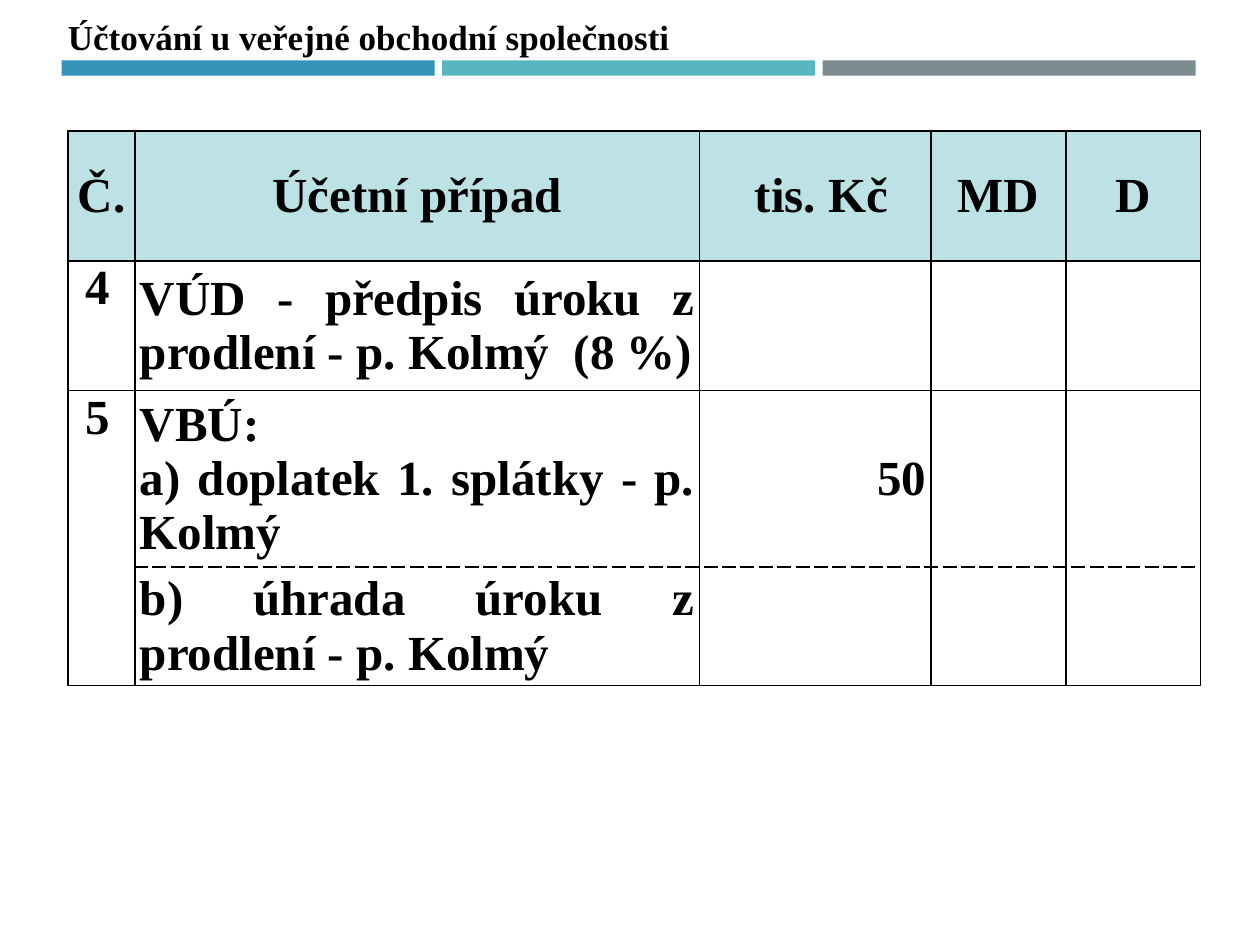
from lxml import etree
from pptx import Presentation
from pptx.dml.color import RGBColor
from pptx.enum.shapes import MSO_SHAPE as SHAPE
from pptx.enum.text import MSO_ANCHOR as ANCHOR, MSO_AUTO_SIZE as AUTO, PP_ALIGN as ALIGN
from pptx.oxml.ns import qn
from pptx.util import Inches, Pt


def color(value):
    return RGBColor.from_string(value)


def add_run(p, text, size):
    r = p.add_run()
    r.text = text
    r.font.name = "Times New Roman"
    r.font.size = Pt(size)
    r.font.bold = True
    r.font.color.rgb = color("000000")


prs = Presentation()
prs.slide_width, prs.slide_height = Inches(10), Inches(7.5)
s = prs.slides.add_slide(prs.slide_layouts[6])

# Three bars under the title
for i, fill in enumerate(["3494BA", "58B6C0", "7A8C8E"]):
    sp = s.shapes.add_shape(SHAPE.RECTANGLE, Inches(0.49 + i * 3.02), Inches(0.48),
                            Inches(2.96), Inches(0.12))
    sp.shadow.inherit = False
    sp.fill.solid()
    sp.fill.fore_color.rgb = color(fill)
    sp.line.fill.background()

# Title
tf = s.shapes.add_textbox(Inches(0.44), Inches(0.07), Inches(5.01), Inches(0.44)).text_frame
tf.word_wrap = False
tf.auto_size = AUTO.SHAPE_TO_FIT_TEXT
add_run(tf.paragraphs[0], "Účtování u veřejné obchodní společnosti", 20)

# Table of accounting entries
widths = [0.53, 4.48, 1.84, 1.07, 1.07]
heights = [1.03, 1.03, 1.4, 0.94]
rows = [
    ["Č.", "Účetní případ", " tis. Kč", "MD", "D"],
    [" 4", "VÚD - předpis úroku z prodlení - p. Kolmý  (8 %)", "", "", ""],
    [" 5", "VBÚ:\na) doplatek 1. splátky - p. Kolmý", "50", "", ""],
    ["", "b) úhrada úroku z prodlení - p. Kolmý", "", "", ""],
]
aligns = [ALIGN.LEFT, ALIGN.JUSTIFY, ALIGN.RIGHT, ALIGN.CENTER, ALIGN.CENTER]
table = s.shapes.add_table(len(rows), len(widths), Inches(0.54), Inches(1.04),
                           Inches(sum(widths)), Inches(sum(heights))).table
for col, width in zip(table.columns, widths):
    col.width = Inches(width)
for row, height in zip(table.rows, heights):
    row.height = Inches(height)
table.cell(2, 0).merge(table.cell(3, 0))

for i, row in enumerate(rows):
    for j, text in enumerate(row):
        cell = table.cell(i, j)
        cell.margin_left = cell.margin_right = Inches(0.04)
        cell.margin_top = cell.margin_bottom = 0
        cell.vertical_anchor = ANCHOR.TOP if i and j == 0 else ANCHOR.MIDDLE
        tf = cell.text_frame
        for k, line in enumerate(text.split("\n") if text else []):
            p = tf.add_paragraph() if k else tf.paragraphs[0]
            p.alignment = aligns[j] if i else ALIGN.CENTER
            add_run(p, line, 28)

        # Borders, dashed between parts a) and b)
        tc_pr = cell._tc.get_or_add_tcPr()
        for side in "LRTB":
            ln = etree.SubElement(tc_pr, qn(f"a:ln{side}"), w=str(Pt(1)))
            fill = etree.SubElement(ln, qn("a:solidFill"))
            etree.SubElement(fill, qn("a:srgbClr"), val="000000")
            dashed = j > 0 and (i, side) in [(2, "B"), (3, "T")]
            etree.SubElement(ln, qn("a:prstDash"), val="dash" if dashed else "solid")

        # Header fill
        if i == 0:
            cell.fill.solid()
            cell.fill.fore_color.rgb = color("BCE2E6")
        else:
            cell.fill.background()

prs.save("out.pptx")
